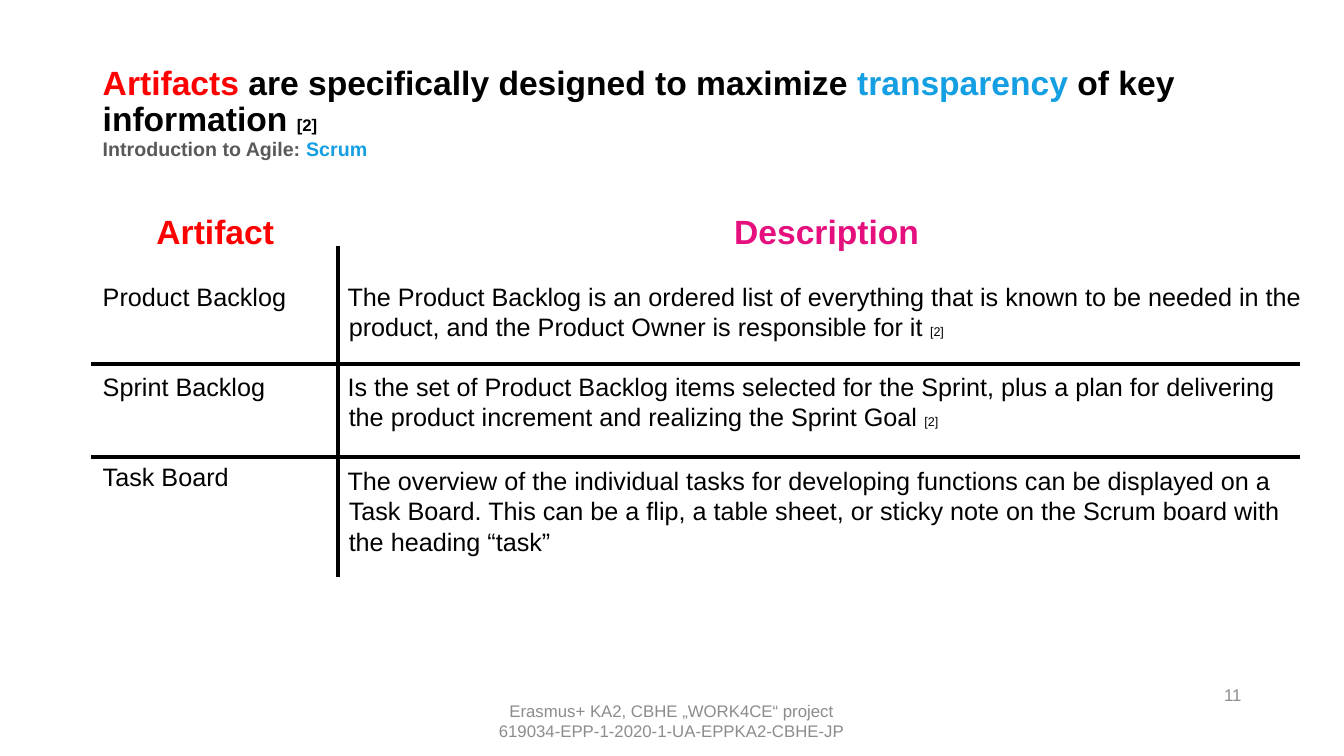
from lxml import etree
from pptx import Presentation
from pptx.dml.color import RGBColor
from pptx.enum.shapes import MSO_CONNECTOR as Connector
from pptx.enum.text import MSO_ANCHOR as Anchor, MSO_AUTO_SIZE as AutoSize, PP_ALIGN as Align
from pptx.oxml.ns import qn
from pptx.util import Cm, Pt

COLORS = {
    "text": "000000",
    "red": "FF0000",
    "blue": "159FE3",
    "pink": "E50F7E",
    "subtitle": "595959",
    "footer": "8C8C8C",
}
FONT = "Arial"
HANG = Cm(0.03)
BODY_SIZE = 18
REFERENCE = ("[2]", 9, "text", False)

# Each entry: space before in points, then its spans (wording, size, color, bold)
ARTIFACTS = [
    (0, [("Artifact", 24, "red", True)]),
    (21.5, [("Product Backlog", BODY_SIZE, "text", False)]),
    (43, [("Sprint Backlog", BODY_SIZE, "text", False)]),
    (43, [("Task Board", BODY_SIZE, "text", False)]),
]
DESCRIPTIONS = [
    (0, [("Description", 24, "pink", True)]),
    (21.5, [("The Product Backlog is an ordered list of everything that is known to be "
             "needed in the product, and the Product Owner is responsible for it ",
             BODY_SIZE, "text", False), REFERENCE]),
    (21.5, [("Is the set of Product Backlog items selected for the Sprint, plus a plan for "
             "delivering the product increment and realizing the Sprint Goal ",
             BODY_SIZE, "text", False), REFERENCE]),
    (24, [("The overview of the individual tasks for developing functions can be displayed "
           "on a Task Board. This can be a flip, a table sheet, or sticky note on the Scrum "
           "board with the heading “task”", BODY_SIZE, "text", False)]),
]


def format_span(span, size, color, bold=False):
    span.font.name = FONT
    span.font.size = Pt(size)
    span.font.bold = bold
    span.font.color.rgb = RGBColor.from_string(COLORS[color])


def add_spans(para, spans):
    for wording, *style in spans:
        span = para.add_run()
        span.text = wording
        format_span(span, *style)


def add_box(page, left, top, width, height, anchor=Anchor.TOP, wrap=True):
    frame = page.shapes.add_textbox(Cm(left), Cm(top), Cm(width), Cm(height)).text_frame
    frame.word_wrap = wrap
    frame.vertical_anchor = anchor
    return frame


def add_title(page, left, top, width, height):
    para = add_box(page, left, top, width, height, Anchor.MIDDLE).paragraphs[0]
    para.line_spacing = 0.9
    add_spans(para, [
        ("Artifacts", 24, "red", True),
        (" are specifically designed to maximize ", 24, "text", True),
        ("transparency", 24, "blue", True),
        (" of key information ", 24, "text", True),
        ("[2]", 12, "text", True),
    ])
    para.add_line_break()
    add_spans(para, [
        ("Introduction to Agile: ", 14, "subtitle", True),
        ("Scrum", 14, "blue", True),
    ])


def add_column(page, left, top, width, height, entries):
    """Add a centred heading with its entries below, each slightly hanging."""
    frame = add_box(page, left, top, width, height)
    for index, (space, spans) in enumerate(entries):
        para = frame.add_paragraph() if index else frame.paragraphs[0]
        para.alignment = Align.LEFT if index else Align.CENTER
        para.space_before = Pt(space)
        properties = para._p.get_or_add_pPr()
        properties.set("marL", str(HANG))
        properties.set("indent", str(-HANG))
        add_spans(para, spans)


def add_rule(page, x1, y1, x2, y2):
    rule = page.shapes.add_connector(Connector.STRAIGHT, Cm(x1), Cm(y1), Cm(x2), Cm(y2))
    rule.line.color.rgb = RGBColor.from_string(COLORS["text"])
    rule.line.width = Pt(3)
    etree.SubElement(rule._element.spPr, qn("a:effectLst"))


def add_artifact_grid(page, left, top, width, height):
    """Add both columns and the rules that separate them."""
    divider = left + 6.17
    add_column(page, left, top, divider - left, height, ARTIFACTS)
    add_column(page, divider, top, left + width - divider, height, DESCRIPTIONS)
    add_rule(page, divider, top + 1.02, divider, top + 9.37)
    for offset in (3.99, 6.33):
        add_rule(page, left - 0.05, top + offset, left + width - 0.38, top + offset)


def add_small_print(page, left, top, width, height, wording, align, anchor, wrap):
    frame = add_box(page, left, top, width, height, anchor, wrap)
    frame.auto_size = AutoSize.NONE if wrap else AutoSize.SHAPE_TO_FIT_TEXT
    para = frame.paragraphs[0]
    para.text = wording
    para.alignment = align
    for span in para.runs:
        format_span(span, 12, "footer")


def main():
    deck = Presentation()
    deck.slide_width, deck.slide_height = Cm(33.87), Cm(19.05)
    page = deck.slides.add_slide(deck.slide_layouts[6])
    add_small_print(page, 12.29, 17.53, 9.27, 1.27,
                    "Erasmus+ KA2, CBHE „WORK4CE“ project\v619034-EPP-1-2020-1-UA-EPPKA2-CBHE-JP",
                    Align.CENTER, Anchor.TOP, False)
    add_title(page, 2.34, 2.24, 29.21, 1.24)
    add_small_print(page, 29.13, 16.99, 2.41, 1.02, "11", Align.RIGHT, Anchor.MIDDLE, True)
    add_artifact_grid(page, 2.34, 5.18, 30.81, 13.26)
    deck.save("out.pptx")


if __name__ == "__main__":
    main()
